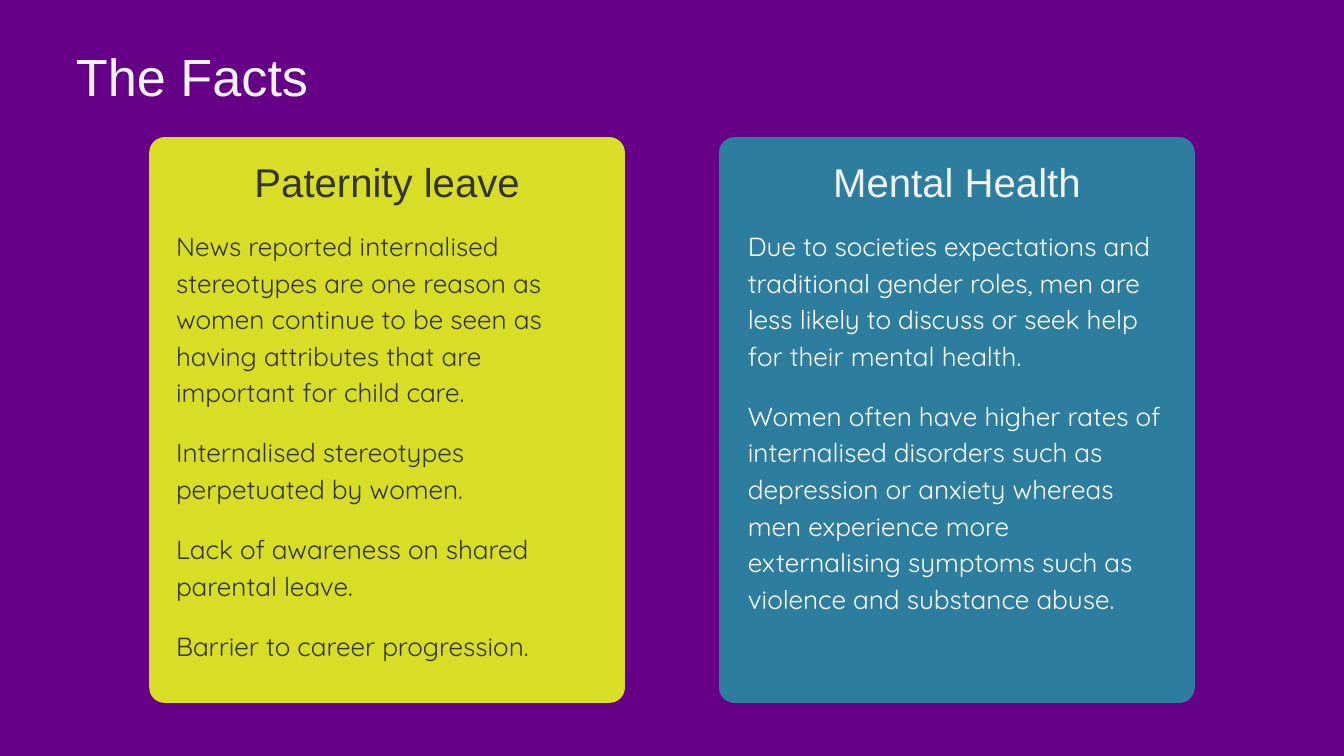
"""Build the slide of facts on paternity leave and mental health."""
from dataclasses import dataclass

from pptx import Presentation
from pptx import util as u
from pptx.dml.color import RGBColor
from pptx.enum import shapes, text
from pptx.slide import Slide


@dataclass(frozen=True)
class Style:
    font: str
    size: float
    leading: float
    gap: float = 0


@dataclass(frozen=True)
class Theme:
    background: str = "660087"
    light: str = "F2F3F5"
    white: str = "FFFFFF"
    dark: str = "343434"
    lime: str = "D8DE26"
    teal: str = "2D7D9E"
    title: Style = Style("Arial", 56, 72.8)
    heading: Style = Style("Arial", 43, 55.9)
    body: Style = Style("Quicksand", 28, 39.2, 25.2)


@dataclass(frozen=True)
class Box:
    left: float
    top: float
    width: float
    height: float

    def lengths(self) -> list[u.Length]:
        return [u.Inches(side) for side in (self.left, self.top, self.width, self.height)]


@dataclass(frozen=True)
class Card:
    left: float
    fill: str
    heading: str
    heading_color: str
    body_color: str
    body_box: Box
    facts: tuple[str, ...]


THEME = Theme()
CARD_TOP, CARD_WIDTH, CARD_HEIGHT, CORNER = 2.04, 7.08, 8.42, 0.23
CARDS = (
    Card(
        2.22, THEME.lime, "Paternity leave", THEME.dark, THEME.dark,
        Box(2.62, 3.35, 6.27, 6.44),
        (
            "News reported internalised stereotypes are one reason as women continue "
            "to be seen as having attributes that are important for child care.",
            "Internalised stereotypes perpetuated by women.",
            "Lack of awareness on shared parental leave.",
            "Barrier to career progression.",
        ),
    ),
    Card(
        10.7, THEME.teal, "Mental Health", THEME.light, THEME.white,
        Box(11.13, 3.35, 6.23, 5.76),
        (
            "Due to societies expectations and traditional gender roles, men are less "
            "likely to discuss or seek help for their mental health.",
            "Women often have higher rates of internalised disorders such as depression "
            "or anxiety whereas men experience more externalising symptoms such as "
            "violence and substance abuse.",
        ),
    ),
)


def add_text(
    slide: Slide,
    box: Box,
    paragraphs: tuple[str, ...],
    style: Style,
    color: str,
    align: text.PP_ALIGN = text.PP_ALIGN.LEFT,
) -> None:
    """Add a text box without margins, one paragraph per string."""
    frame = slide.shapes.add_textbox(*box.lengths()).text_frame
    frame.word_wrap = True
    frame.margin_left = frame.margin_top = frame.margin_right = frame.margin_bottom = 0
    for index, wording in enumerate(paragraphs):
        paragraph = frame.add_paragraph() if index else frame.paragraphs[0]
        paragraph.text = wording
        paragraph.alignment = align
        paragraph.line_spacing = u.Pt(style.leading)
        paragraph.space_before = u.Pt(style.gap if index else 0)
        paragraph.font.name = style.font
        paragraph.font.size = u.Pt(style.size)
        paragraph.font.color.rgb = RGBColor.from_string(color)


def add_card(slide: Slide, card: Card) -> None:
    """Draw a rounded panel with its heading and facts."""
    panel = slide.shapes.add_shape(
        shapes.MSO_SHAPE.ROUNDED_RECTANGLE,
        *Box(card.left, CARD_TOP, CARD_WIDTH, CARD_HEIGHT).lengths(),
    )
    panel.adjustments[0] = CORNER / CARD_WIDTH
    panel.shadow.inherit = False
    panel.fill.solid()
    panel.fill.fore_color.rgb = RGBColor.from_string(card.fill)
    panel.line.fill.background()
    add_text(
        slide, Box(card.left, 2.28, CARD_WIDTH, 0.76), (card.heading,),
        THEME.heading, card.heading_color, text.PP_ALIGN.CENTER,
    )
    add_text(slide, card.body_box, card.facts, THEME.body, card.body_color)


def main() -> None:
    """Build and save the slide."""
    presentation = Presentation()
    presentation.slide_width = u.Inches(20)
    presentation.slide_height = u.Inches(11.25)
    slide = presentation.slides.add_slide(presentation.slide_layouts[6])
    slide.background.fill.solid()
    slide.background.fill.fore_color.rgb = RGBColor.from_string(THEME.background)
    add_text(slide, Box(1.13, 0.58, 5.57, 1.02), ("The Facts",), THEME.title, THEME.light)
    for card in CARDS:
        add_card(slide, card)
    presentation.save("out.pptx")


if __name__ == "__main__":
    main()
